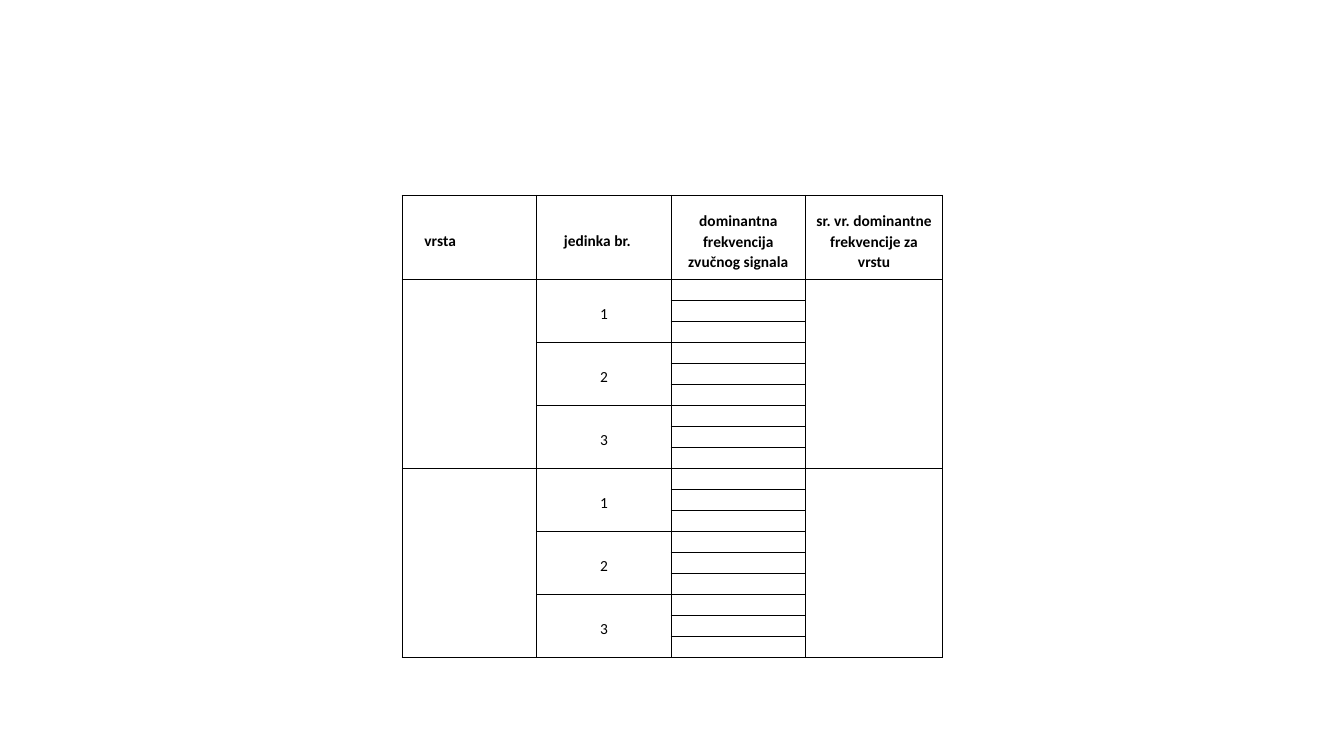
"""Build a slide with an empty record table for dominant sound frequencies by species."""
from lxml import etree
from pptx import Presentation
from pptx import util as u
from pptx.dml import color
from pptx.enum import text
from pptx.oxml import ns

THEME = {
    "font": "Calibri",
    "ink": "000000",
    "size": u.Pt(11),
    "small": u.Pt(8),
    "line": u.Pt(1),
}
LEFT, MID = text.PP_ALIGN.LEFT, text.PP_ALIGN.CENTER
HEADS = [
    ("vrsta", LEFT, 0.35, 0.22, 0),
    ("jedinka br.", LEFT, 0.35, 0.27, 0),
    ("dominantna frekvencija zvučnog signala", MID, 0.15, 0.1, 0.1),
    ("sr. vr. dominantne frekvencije za vrstu", MID, 0.15, 0.09, 0.09),
]
KINDS, UNITS, TESTS = 2, 3, 3
SPAN = UNITS * TESTS
ROWS = KINDS * SPAN


def frame(cell):
    props = cell._tc.get_or_add_tcPr()
    for i, side in enumerate(("lnL", "lnR", "lnT", "lnB")):
        line = etree.Element(ns.qn("a:" + side), w=str(THEME["line"]))
        fill = etree.SubElement(line, ns.qn("a:solidFill"))
        etree.SubElement(fill, ns.qn("a:srgbClr"), val=THEME["ink"])
        props.insert(i, line)
    cell.fill.background()
    cell.margin_left = cell.margin_right = cell.margin_top = cell.margin_bottom = 0
    end = cell.text_frame.paragraphs[0]._p.get_or_add_endParaRPr()
    end.set("sz", str(int(THEME["small"].pt * 100)))


def write(cell, words, align, top, left=0, right=0, bold=False):
    cell.margin_top, cell.margin_left, cell.margin_right = map(u.Inches, (top, left, right))
    cell.text_frame.text = words
    para = cell.text_frame.paragraphs[0]
    para.alignment, para.line_spacing = align, 1.07
    font = para.runs[0].font
    font.name, font.size, font.bold = THEME["font"], THEME["size"], bold
    font.color.rgb = color.RGBColor.from_string(THEME["ink"])


deck = Presentation()
deck.slide_width, deck.slide_height = u.Inches(13.33), u.Inches(7.5)
slide = deck.slides.add_slide(deck.slide_layouts[6])

table = slide.shapes.add_table(
    ROWS + 1, len(HEADS), u.Inches(3.99), u.Inches(1.94), u.Inches(5.36), u.Inches(4.58)
).table
table.first_row = table.horz_banding = False
for col in table.columns:
    col.width = u.Inches(4 / 3)
table.columns[3].width = u.Inches(1.36)
for row in table.rows:
    row.height = u.Inches(3.75 / ROWS)
table.rows[0].height = u.Inches(0.83)

for cell in table.iter_cells():
    frame(cell)
for i, (words, align, top, left, right) in enumerate(HEADS):
    write(table.cell(0, i), words, align, top, left, right, True)

for kind in range(KINDS):
    first = 1 + kind * SPAN
    for col in (0, 3):
        table.cell(first, col).merge(table.cell(first + SPAN - 1, col))
    for unit in range(UNITS):
        row = first + unit * TESTS
        table.cell(row, 1).merge(table.cell(row + TESTS - 1, 1))
        write(table.cell(row, 1), str(unit + 1), MID, 0.24)

deck.save("out.pptx")
